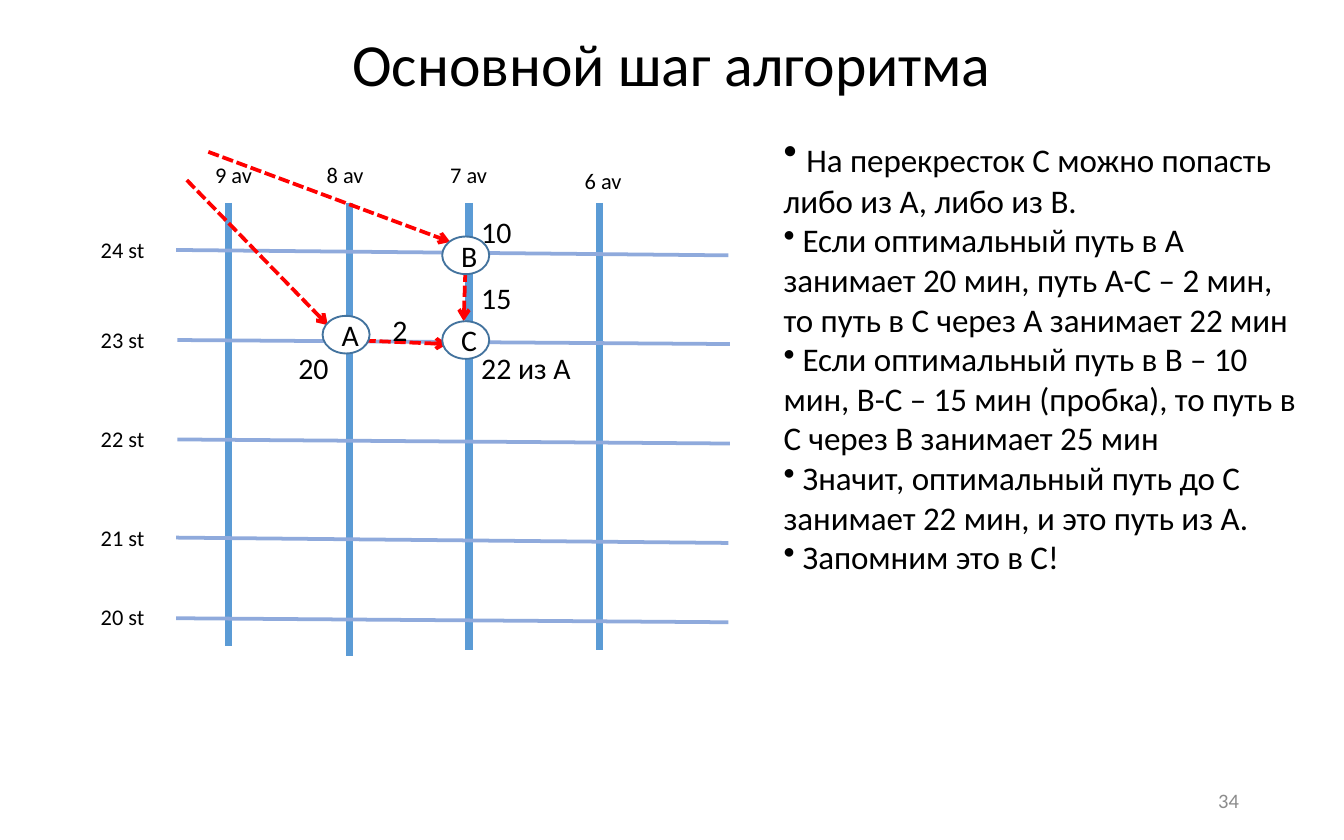
"""Build the slide on the main step of the shortest-route algorithm."""
from dataclasses import dataclass

import pptx
import pptx.dml.color
import pptx.enum.dml
import pptx.enum.shapes
import pptx.enum.text
import pptx.oxml
import pptx.oxml.ns
import pptx.util

SCALE = 9144
FONT = "Calibri"
COLORS = {
    "text": "000000",
    "number": "8C8C8C",
    "avenue": "5B9BD5",
    "street": "8FAADC",
    "route": "FF0000",
    "node": "FFFFFF",
    "outline": "43739E",
}
ALIGN = pptx.enum.text.PP_ALIGN
ANCHOR = pptx.enum.text.MSO_ANCHOR
FIT = pptx.enum.text.MSO_AUTO_SIZE


@dataclass(frozen=True)
class Avenue:
    name: str
    x: int
    bottom: int
    label_left: int
    label_top: int


@dataclass(frozen=True)
class Street:
    name: str
    left: int
    y: int
    drop: int
    label_top: int


@dataclass(frozen=True)
class Route:
    x1: int
    y1: int
    x2: int
    y2: int


@dataclass(frozen=True)
class Crossing:
    name: str
    left: int
    top: int


@dataclass(frozen=True)
class Minutes:
    text: str
    left: int
    top: int
    width: int
    wrap: bool


AVENUES = [
    Avenue("9 av", 170, 481, 151, 116),
    Avenue("8 av", 260, 488, 234, 116),
    Avenue("7 av", 349, 484, 326, 116),
    Avenue("6 av", 446, 484, 426, 120),
]
STREETS = [
    Street("24 st", 131, 186, 4, 172),
    Street("23 st", 132, 253, 3, 239),
    Street("22 st", 132, 327, 3, 312),
    Street("21 st", 131, 400, 4, 386),
    Street("20 st", 131, 460, 3, 445),
]
ROUTES = [
    Route(260, 253, 333, 256),
    Route(347, 179, 345, 239),
    Route(139, 134, 244, 242),
    Route(155, 113, 335, 180),
]
CROSSINGS = [Crossing("A", 240, 235), Crossing("B", 329, 176), Crossing("C", 329, 239)]
MINUTES = [
    Minutes("20", 213, 256, 41, False),
    Minutes("2", 283, 228, 42, True),
    Minutes("15", 349, 204, 42, True),
    Minutes("10", 349, 155, 42, True),
    Minutes("22 из А", 349, 256, 85, False),
]
STEPS = [
    "На перекресток C можно попасть либо из A, либо из B.",
    "Если оптимальный путь в A занимает 20 мин, путь A-C – 2 мин, то путь в C через A занимает 22 мин",
    "Если оптимальный путь в B – 10 мин, B-C – 15 мин (пробка), то путь в C через B занимает 25 мин",
    "Значит, оптимальный путь до C занимает 22 мин, и это путь из A.",
    "Запомним это в C!",
]


def px(length: int) -> pptx.util.Emu:
    """Turn px into EMU."""
    return pptx.util.Emu(length * SCALE)


def rgb(name: str) -> pptx.dml.color.RGBColor:
    """Look up a named colour."""
    return pptx.dml.color.RGBColor.from_string(COLORS[name])


def add_span(para, text: str, size: float, color: str = "text") -> None:
    """Add one formatted run to a paragraph."""
    span = para.add_run()
    span.text = text
    span.font.name = FONT
    span.font.size = pptx.util.Pt(size)
    span.font.color.rgb = rgb(color)


def set_frame(frame, wrap: bool = True, anchor=ANCHOR.TOP, fit=FIT.NONE) -> None:
    """Set the wrapping, anchor and insets of a text frame."""
    frame.word_wrap = wrap
    frame.auto_size = fit
    frame.vertical_anchor = anchor
    frame.margin_left = frame.margin_right = px(9)
    frame.margin_top = frame.margin_bottom = px(4)


def add_label(page, text: str, left: int, top: int, width: int, height: int,
              size: float, wrap: bool = False) -> None:
    """Add a one-line label that fits its text."""
    box = page.shapes.add_textbox(px(left), px(top), px(width), px(height))
    set_frame(box.text_frame, wrap, fit=FIT.SHAPE_TO_FIT_TEXT)
    add_span(box.text_frame.paragraphs[0], text, size)


def add_line(page, x1: int, y1: int, x2: int, y2: int, color: str, width: float):
    """Add a straight line without a shadow."""
    line = page.shapes.add_connector(
        pptx.enum.shapes.MSO_CONNECTOR.STRAIGHT, px(x1), px(y1), px(x2), px(y2))
    line.line.color.rgb = rgb(color)
    line.line.width = pptx.util.Pt(width)
    line._element.spPr.append(pptx.oxml.parse_xml(
        f'<a:effectLst {pptx.oxml.ns.nsdecls("a")}/>'))
    return line


def add_route(page, route: Route) -> None:
    """Add a dashed route arrow."""
    arrow = add_line(page, route.x1, route.y1, route.x2, route.y2, "route", 2)
    arrow.line.dash_style = pptx.enum.dml.MSO_LINE.SQUARE_DOT
    arrow.line._get_or_add_ln().append(pptx.oxml.parse_xml(
        f'<a:tailEnd {pptx.oxml.ns.nsdecls("a")} type="arrow"/>'))


def add_crossing(page, crossing: Crossing) -> None:
    """Add a lettered crossing."""
    node = page.shapes.add_shape(pptx.enum.shapes.MSO_SHAPE.OVAL,
                                 px(crossing.left), px(crossing.top), px(35), px(28))
    node.shadow.inherit = False
    node.fill.solid()
    node.fill.fore_color.rgb = rgb("node")
    node.line.color.rgb = rgb("outline")
    node.line.width = pptx.util.Pt(1)
    set_frame(node.text_frame, anchor=ANCHOR.MIDDLE)
    para = node.text_frame.paragraphs[0]
    para.alignment = ALIGN.CENTER
    add_span(para, crossing.name, 16)


def add_steps(page) -> None:
    """Add the bulleted explanation."""
    box = page.shapes.add_textbox(px(574), px(95), px(402), px(378))
    frame = box.text_frame
    set_frame(frame)
    for index, step in enumerate(STEPS):
        para = frame.add_paragraph() if index else frame.paragraphs[0]
        para._p.get_or_add_pPr().append(pptx.oxml.parse_xml(
            f'<a:buChar {pptx.oxml.ns.nsdecls("a")} char="•"/>'))
        add_span(para, " ", 17.7 if index else 21)
        add_span(para, step, 17.7)


def main() -> None:
    """Build and save the deck."""
    deck = pptx.Presentation()
    deck.slide_width, deck.slide_height = px(1000), px(625)
    page = deck.slides.add_slide(deck.slide_layouts.get_by_name("Title Only"))

    title = page.shapes.title
    title.left, title.top, title.width, title.height = px(54), px(15), px(892), px(63)
    set_frame(title.text_frame, anchor=ANCHOR.MIDDLE)
    heading = title.text_frame.paragraphs[0]
    heading.alignment = ALIGN.CENTER
    add_span(heading, "Основной шаг алгоритма", 32)

    for avenue in AVENUES:
        add_line(page, avenue.x, 151, avenue.x, avenue.bottom, "avenue", 4)
        add_label(page, avenue.name, avenue.label_left, avenue.label_top, 48, 30, 12)
    for street in STREETS:
        add_line(page, street.left, street.y, street.left + 411,
                 street.y + street.drop, "street", 2)
        add_label(page, street.name, 66, street.label_top, 53, 30, 12)
    for route in ROUTES:
        add_route(page, route)
    add_steps(page)
    for crossing in CROSSINGS:
        add_crossing(page, crossing)
    for value in MINUTES:
        add_label(page, value.text, value.left, value.top, value.width, 36, 16, value.wrap)

    number = page.shapes.add_textbox(px(706), px(579), px(225), px(33))
    set_frame(number.text_frame, anchor=ANCHOR.MIDDLE)
    para = number.text_frame.paragraphs[0]
    para.alignment = ALIGN.RIGHT
    add_span(para, "34", 11, "number")
    deck.save("out.pptx")


if __name__ == "__main__":
    main()
